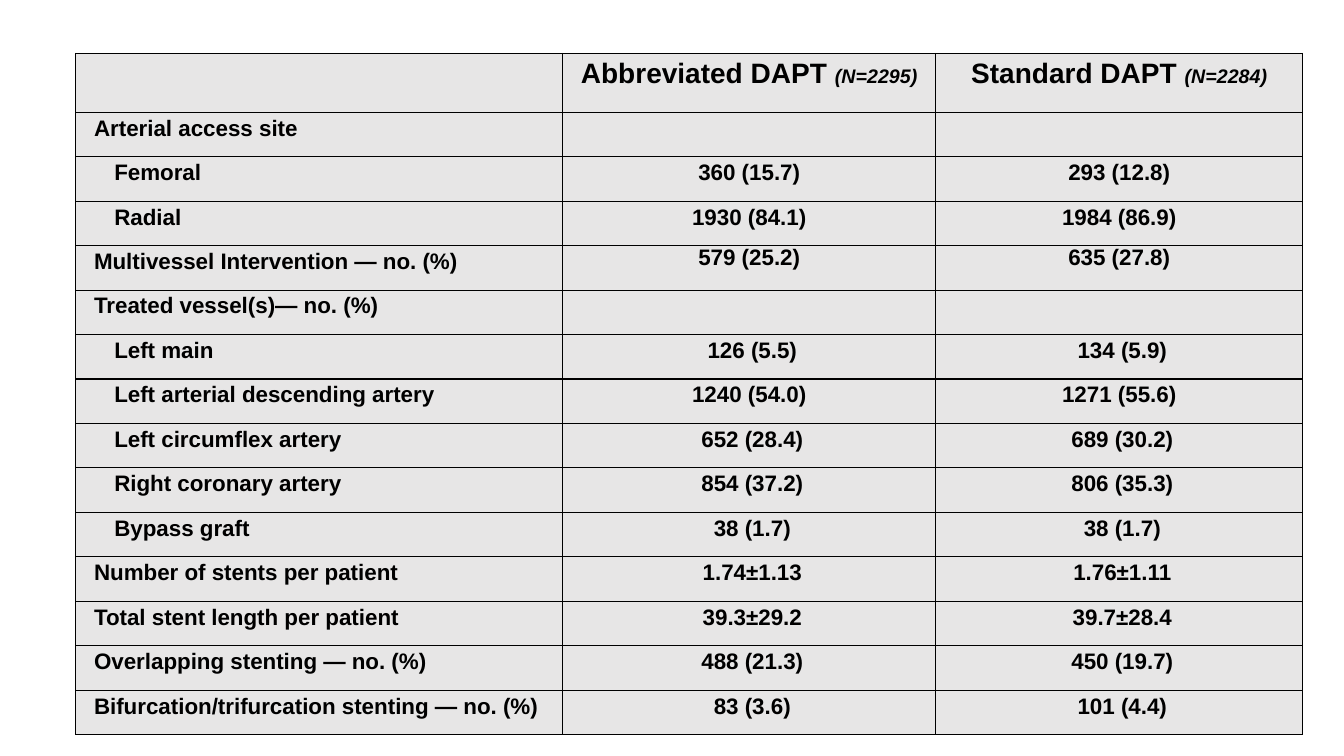
import pptx
import pptx.dml.color
import pptx.enum.text
import pptx.oxml
import pptx.oxml.ns
import pptx.util

Cm = pptx.util.Cm
Pt = pptx.util.Pt
BLACK = pptx.dml.color.RGBColor(0x00, 0x00, 0x00)
LIGHT_GREY = pptx.dml.color.RGBColor(0xE7, 0xE6, 0xE6)

COLUMN_WIDTHS = (12.27, 9.4, 9.25)
HEADER_HEIGHT = 1.48
ROW_HEIGHT = 1.12
LABEL_INDENTS = (0.3, 0.81)
TIGHT_ROW = "Multivessel Intervention — no. (%)"

GROUPS = (("Abbreviated DAPT ", "(N=2295)"), ("Standard DAPT ", "(N=2284)"))

# Label, indent level, abbreviated DAPT, standard DAPT
ROWS = (
    ("Arterial access site", 0, "", ""),
    ("Femoral", 1, "360 (15.7)", "293 (12.8)"),
    ("Radial", 1, "1930 (84.1)", "1984 (86.9)"),
    (TIGHT_ROW, 0, "579 (25.2)", "635 (27.8)"),
    ("Treated vessel(s)— no. (%)", 0, "", ""),
    ("Left main", 1, " 126 (5.5)", " 134 (5.9)"),
    ("Left arterial descending artery", 1, "1240 (54.0)", "1271 (55.6)"),
    ("Left circumflex artery", 1, " 652 (28.4)", " 689 (30.2)"),
    ("Right coronary artery", 1, " 854 (37.2)", " 806 (35.3)"),
    ("Bypass graft", 1, " 38 (1.7)", " 38 (1.7)"),
    ("Number of stents per patient", 0, " 1.74±1.13", " 1.76±1.11"),
    ("Total stent length per patient", 0, " 39.3±29.2", " 39.7±28.4"),
    ("Overlapping stenting — no. (%)", 0, " 488 (21.3)", " 450 (19.7)"),
    ("Bifurcation/trifurcation stenting — no. (%)", 0, " 83 (3.6)", " 101 (4.4)"),
)


def add_text(paragraph, text, size=16, italic=False):
    run = paragraph.add_run()
    run.text = text
    run.font.name = "Arial"
    run.font.size = Pt(size)
    run.font.bold = True
    run.font.italic = italic
    run.font.color.rgb = BLACK


class SlideBuilder:
    """Holds the table style and the current slide."""

    def __init__(self, slide, fill=LIGHT_GREY, border=BLACK, border_width=1):
        self.slide = slide
        self.fill = fill
        self.border = border
        self.border_width = Pt(border_width)

    def add_table(self, left, top, widths, heights):
        shape = self.slide.shapes.add_table(
            len(heights), len(widths), Cm(left), Cm(top),
            Cm(sum(widths)), Cm(sum(heights)))
        table = shape.table
        table.first_row = False
        table.horz_banding = False
        for column, width in zip(table.columns, widths):
            column.width = Cm(width)
        for row, height in zip(table.rows, heights):
            row.height = Cm(height)
        for cell in table.iter_cells():
            self.style_cell(cell)
        return table

    def style_cell(self, cell):
        cell.margin_left = cell.margin_right = Cm(0.16)
        cell.margin_top = cell.margin_bottom = 0
        properties = cell._tc.get_or_add_tcPr()
        for side in ("lnL", "lnR", "lnT", "lnB"):
            properties.append(pptx.oxml.parse_xml(
                f'<a:{side} {pptx.oxml.ns.nsdecls("a")} w="{self.border_width}">'
                f'<a:solidFill><a:srgbClr val="{self.border}"/></a:solidFill>'
                f'</a:{side}>'))
        cell.fill.solid()
        cell.fill.fore_color.rgb = self.fill

    def cell_paragraph(self, cell, indent=None, tight=False):
        """Return the cell's paragraph: centred, or left-aligned at an indent."""
        paragraph = cell.text_frame.paragraphs[0]
        if indent is None:
            paragraph.alignment = pptx.enum.text.PP_ALIGN.CENTER
        else:
            paragraph._p.get_or_add_pPr().set("marL", str(Cm(indent)))
        if not tight:
            paragraph.line_spacing = 1.15
            paragraph.space_after = Pt(10)
        return paragraph


def main():
    presentation = pptx.Presentation()
    presentation.slide_width = Cm(33.87)
    presentation.slide_height = Cm(19.05)
    slide = presentation.slides.add_slide(presentation.slide_layouts[6])
    builder = SlideBuilder(slide)

    heights = [HEADER_HEIGHT] + [ROW_HEIGHT] * len(ROWS)
    table = builder.add_table(1.91, 1.35, COLUMN_WIDTHS, heights)

    for column, (group, count) in enumerate(GROUPS, start=1):
        paragraph = builder.cell_paragraph(table.cell(0, column))
        add_text(paragraph, group, size=20)
        add_text(paragraph, count, size=14, italic=True)

    for row, (label, level, *values) in enumerate(ROWS, start=1):
        paragraph = builder.cell_paragraph(table.cell(row, 0), LABEL_INDENTS[level])
        add_text(paragraph, label)
        for column, value in enumerate(values, start=1):
            if value:
                paragraph = builder.cell_paragraph(
                    table.cell(row, column), tight=label == TIGHT_ROW)
                add_text(paragraph, value)

    presentation.save("out.pptx")


if __name__ == "__main__":
    main()
